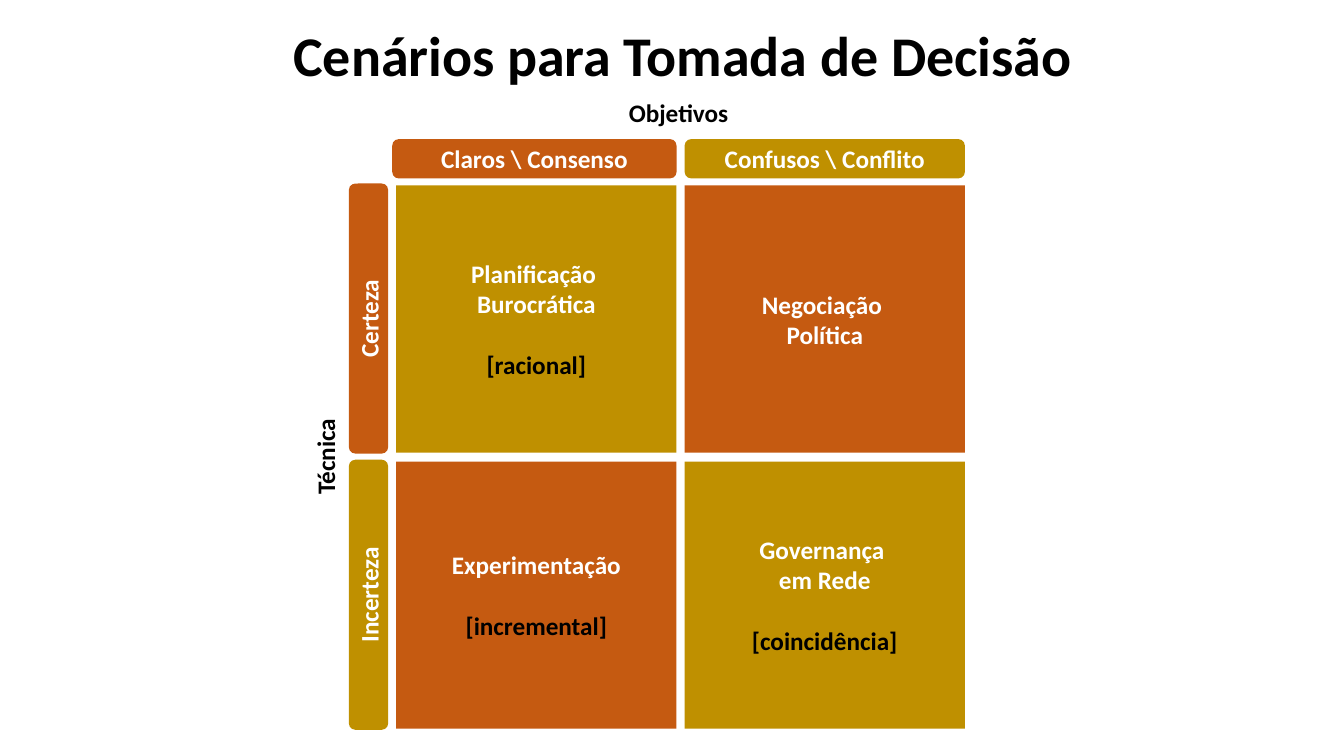
from dataclasses import dataclass

from pptx import Presentation
from pptx import util as u
from pptx.dml.color import RGBColor
from pptx.enum import shapes, text


@dataclass(frozen=True)
class Theme:
    """Colours, font and type sizes of the slide."""
    orange: str = "C55A11"
    gold: str = "BF9000"
    white: str = "FFFFFF"
    black: str = "000000"
    font: str = "Calibri"
    title_size: int = 40
    body_size: int = 18
    line_height: float = 1.22


THEME = Theme()
CELL_W, CELL_H = 2.78, 2.65
PITCH_X, PITCH_Y = 2.86, 2.74
BAR = 0.39

COLUMNS = [("Claros \\ Consenso", THEME.orange, 0.04),
           ("Confusos \\ Conflito", THEME.gold, 0)]
ROWS = [("Certeza", THEME.orange), ("Incerteza", THEME.gold)]
SCENARIOS = [
    [(["Planificação ", "Burocrática"], "[racional]"),
     (["Negociação ", "Política"], None)],
    [(["Experimentação"], "[incremental]"),
     (["Governança ", "em Rede"], "[coincidência]")],
]


def write(paragraph, wording, color, size=THEME.body_size):
    """Fill a paragraph with one centred bold run."""
    paragraph.alignment = text.PP_ALIGN.CENTER
    run = paragraph.add_run()
    run.text = wording
    style = {"name": THEME.font, "size": u.Pt(size), "bold": True}
    for key, value in style.items():
        setattr(run.font, key, value)
    run.font.color.rgb = RGBColor.from_string(color)


def add_block(slide, kind, box, lines, fill=None, note=None, rotation=0):
    """Add a shape with centred lines and an optional note set one line apart."""
    block = slide.shapes.add_shape(kind, *map(u.Inches, box))
    block.shadow.inherit = False
    block.rotation = rotation
    block.line.fill.background()
    if fill:
        block.fill.solid()
        block.fill.fore_color.rgb = RGBColor.from_string(fill)
    else:
        block.fill.background()
    frame = block.text_frame
    frame.word_wrap = True
    frame.vertical_anchor = text.MSO_ANCHOR.MIDDLE
    color = THEME.white if fill else THEME.black
    for index, line in enumerate(lines):
        paragraph = frame.add_paragraph() if index else frame.paragraphs[0]
        write(paragraph, line, color)
    if note:
        paragraph = frame.add_paragraph()
        paragraph.space_before = u.Pt(THEME.body_size * THEME.line_height)
        write(paragraph, note, THEME.black)


def add_bar(slide, box, label, fill=None):
    """Add a rounded label, turned to read upwards when its box is tall."""
    left, top, width, height = box
    rotation = 0
    if height > width:
        left, top = left + (width - height) / 2, top + (height - width) / 2
        width, height, rotation = height, width, 270
    add_block(slide, shapes.MSO_SHAPE.ROUNDED_RECTANGLE,
              (left, top, width, height), [label], fill, rotation=rotation)


def add_title(slide, box, wording):
    """Place and format the title placeholder."""
    title = slide.shapes.title
    for side, value in zip(("left", "top", "width", "height"), box):
        setattr(title, side, u.Inches(value))
    title.text_frame.vertical_anchor = text.MSO_ANCHOR.MIDDLE
    paragraph = title.text_frame.paragraphs[0]
    paragraph.line_spacing = 0.9
    write(paragraph, wording, THEME.black, THEME.title_size)


def add_objectives(slide, left, top):
    """Add the column axis name and headings above the matrix corner."""
    add_bar(slide, (left - 0.04, top - 0.92, 5.68, BAR), "Objetivos")
    for column, (label, fill, overhang) in enumerate(COLUMNS):
        box = (left + column * PITCH_X - overhang, top - 0.46,
               CELL_W + overhang, BAR)
        add_bar(slide, box, label, fill)


def add_technique(slide, left, top):
    """Add the row axis name and headings beside the matrix corner."""
    add_bar(slide, (left - 0.9, top - 0.02, BAR, 5.42), "Técnica")
    for row, (label, fill) in enumerate(ROWS):
        box = (left - 0.47, top + row * PITCH_Y - 0.02, BAR, CELL_H + 0.03)
        add_bar(slide, box, label, fill)


def add_matrix(slide, left, top):
    """Add the scenario cells in alternating colours."""
    for row, scenarios in enumerate(SCENARIOS):
        for column, (lines, note) in enumerate(scenarios):
            fill = (THEME.gold, THEME.orange)[(row + column) % 2]
            box = (left + column * PITCH_X, top + row * PITCH_Y, CELL_W, CELL_H)
            add_block(slide, shapes.MSO_SHAPE.RECTANGLE, box, lines, fill, note)


def main():
    """Build and save the decision scenarios slide."""
    deck = Presentation()
    deck.slide_width, deck.slide_height = u.Inches(13.33), u.Inches(7.5)
    slide = deck.slides.add_slide(deck.slide_layouts[5])
    add_title(slide, (1.02, -0.01, 11.5, 1.17), "Cenários para Tomada de Decisão")
    for add_region in (add_objectives, add_technique, add_matrix):
        add_region(slide, 3.93, 1.84)
    deck.save("out.pptx")


if __name__ == "__main__":
    main()
